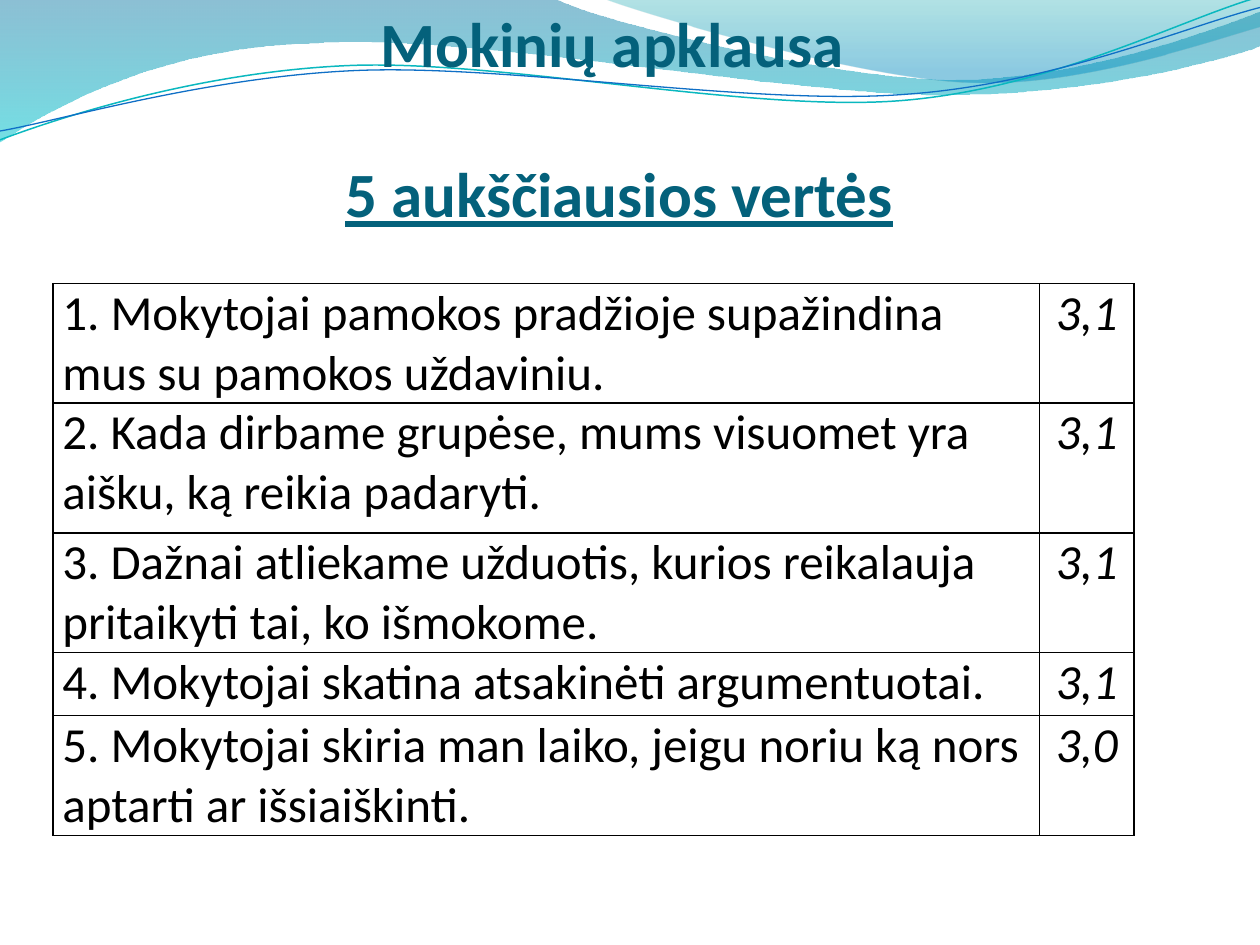
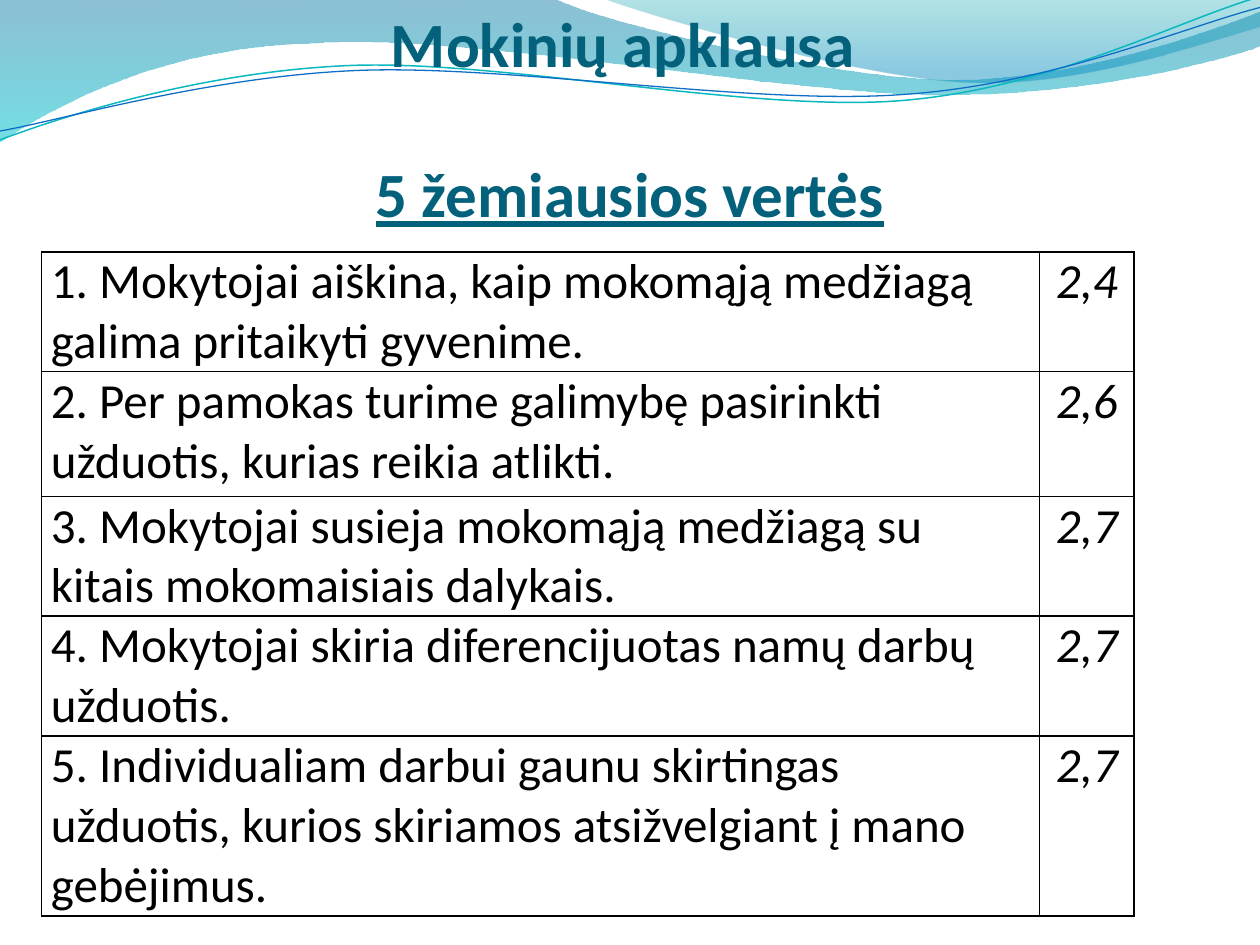
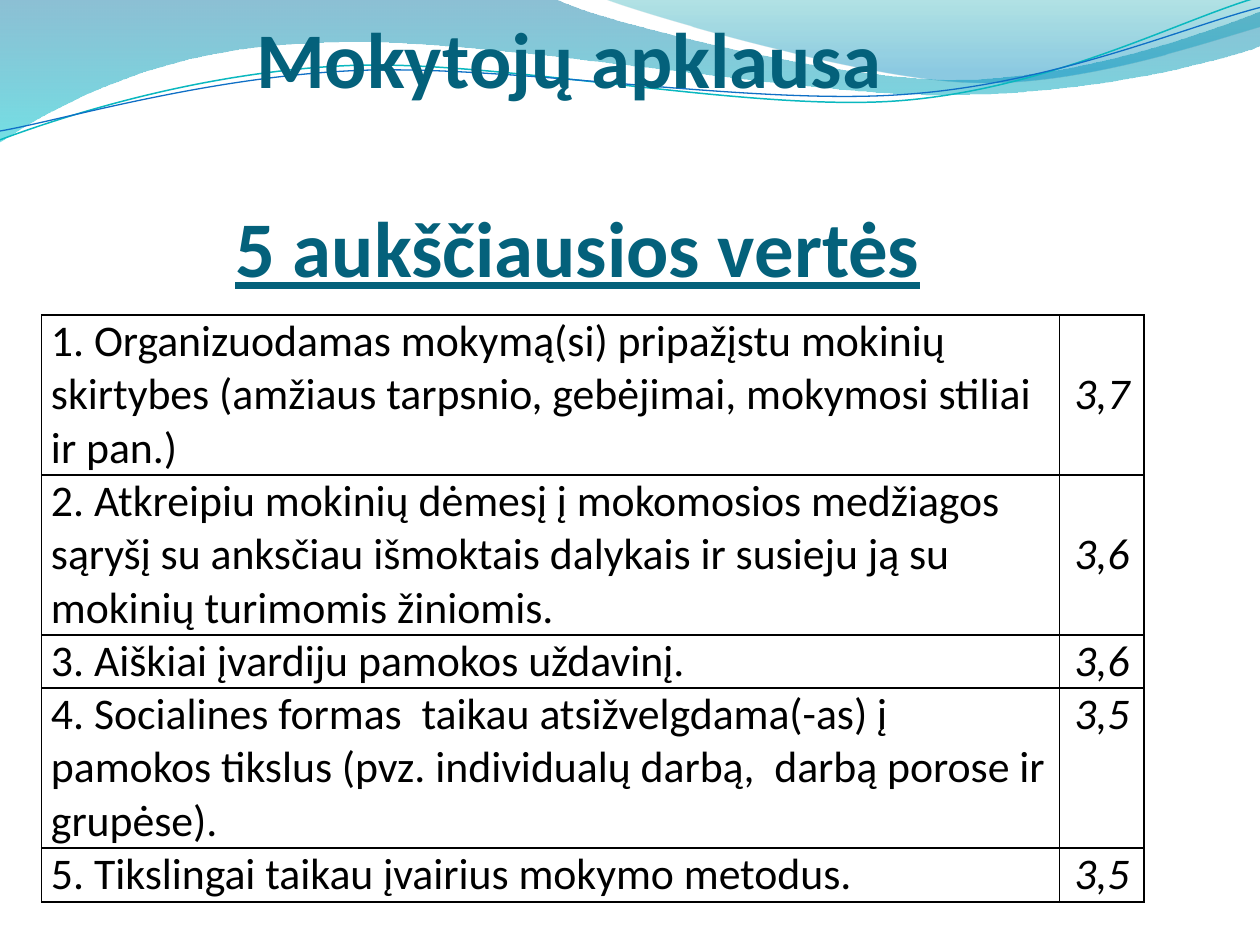
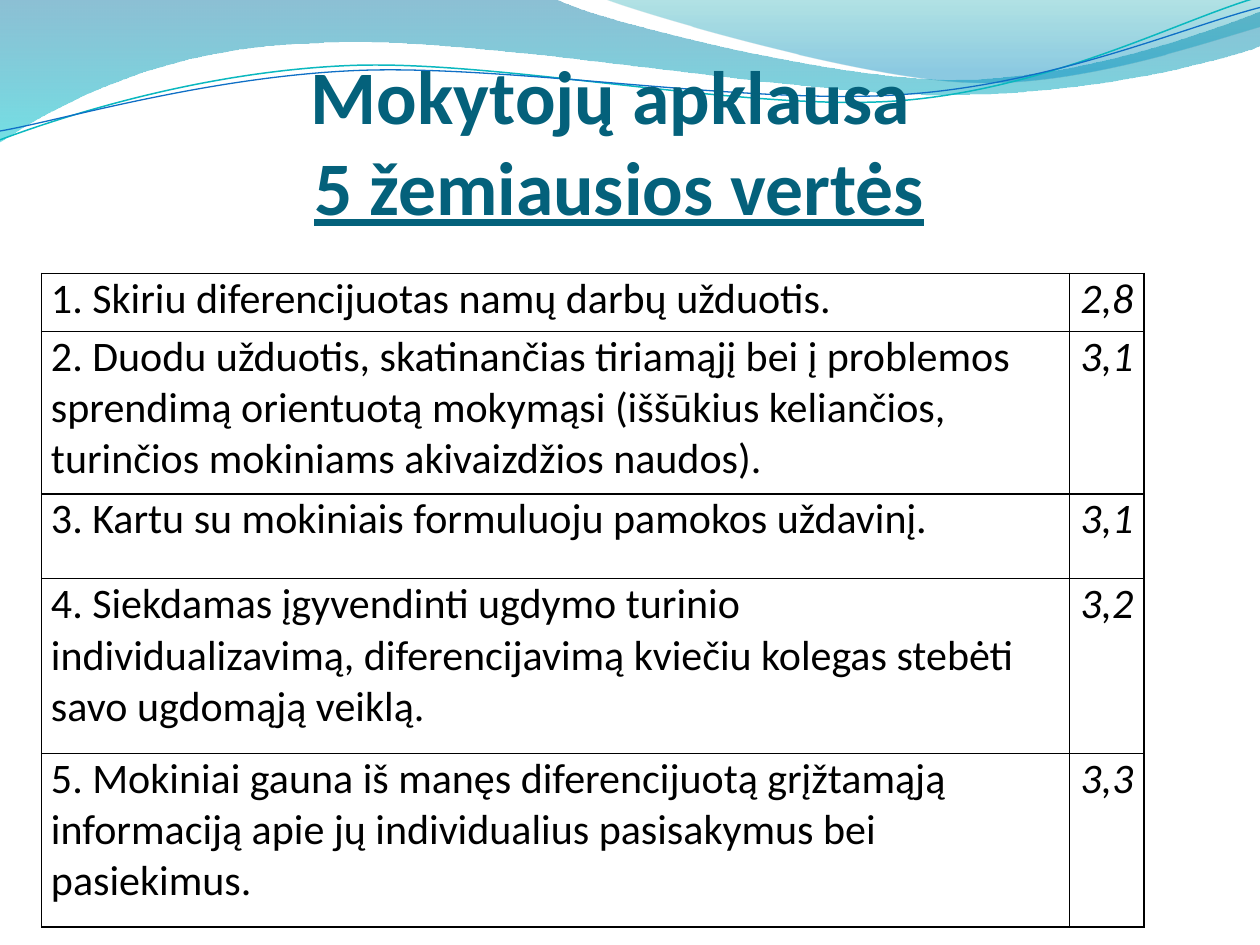
from math import cos, radians, sin
from lxml.etree import SubElement
from pptx import Presentation
from pptx.dml.color import RGBColor as RGB
from pptx.enum.text import MSO_ANCHOR as ANCHOR, PP_ALIGN as ALIGN
from pptx.oxml.ns import qn
from pptx.util import Inches, Pt

FONT = "Calibri"
COLORS = {
    "title": "04617B", "text": "000000", "teal": "0AB8BF", "blue": "0F6FC6",
    "deep": "0074A1", "aqua": "00C6CF", "sea": "00A1A9", "sky": "008BBF",
}
TILT = -2.7

# Outlines in inches: pairs are straight steps, sixes are Bezier curves.
BAND = [(0, 0), (4.4, -0.01), (4.76, 0.17, 6.64, 0.63, 7.58, 0.63),
        (8.53, 0.63, 9.58, 0.26, 10, 0.09), (10.01, 0.36),
        (9.83, 0.44, 8.7, 0.76, 7.46, 0.75), (6.22, 0.75, 3.82, 0.28, 2.57, 0.34),
        (1.29, 0.36, 0.46, 0.83, -0.01, 1.13), (0, 0)]
CREST = [(4.79, -0.01), (5.09, 0.11, 6.82, 0.62, 7.69, 0.65),
         (8.56, 0.69, 9.61, 0.32, 10, 0.21), (10, 0), (4.79, -0.01)]
TEAL_LINE = [(0, 1.11), (0.48, 0.93, 1.58, 0.57, 2.77, 0.52),
             (3.95, 0.47, 5.93, 0.89, 7.13, 0.8), (8.33, 0.71, 9.38, 0.15, 9.98, -0.02)]
BLUE_LINE = [(0, 1.04), (0.47, 0.96, 1.64, 0.61, 2.83, 0.56),
             (4.03, 0.51, 5.97, 0.84, 7.17, 0.75), (8.36, 0.67, 9.41, 0.21, 10, 0.06)]

PUPILS, STAFF = "Mokinių apklausa ", "Mokytojų apklausa "
HIGH, LOW = "5 aukščiausios vertės", "5 žemiausios vertės"

# Title: lines, size, box, gap in line heights. Rows: text, value, height.
SLIDES = [
    {"title": (PUPILS, HIGH, 36, (0.75, 0.58, 8.33, 1.25), 1),
     "at": (0.42, 2.25), "cols": (7.83, 0.75), "size": 28,
     "rows": [
         ("1. Mokytojai pamokos pradžioje supažindina mus su pamokos uždaviniu.", "3,1", 0.95),
         ("2. Kada dirbame grupėse, mums visuomet yra aišku, ką reikia padaryti.", "3,1", 1.03),
         ("3. Dažnai atliekame užduotis, kurios reikalauja pritaikyti tai, ko išmokome.",
          "3,1", 0.95),
         ("4. Mokytojai skatina atsakinėti argumentuotai.", "3,1", 0.5),
         ("5. Mokytojai skiria man laiko, jeigu noriu ką nors aptarti ar išsiaiškinti.",
          "3,0", 0.95)]},
    {"title": (PUPILS, LOW, 36, (0.5, 0.58, 9, 1.25), 1),
     "at": (0.33, 2), "cols": (7.92, 0.75), "size": 28,
     "rows": [
         ("1. Mokytojai aiškina, kaip mokomąją medžiagą galima pritaikyti gyvenime.",
          "2,4", 0.95),
         ("2. Per pamokas turime galimybę pasirinkti užduotis, kurias reikia atlikti.",
          "2,6", 0.99),
         ("3. Mokytojai susieja mokomąją medžiagą su kitais mokomaisiais dalykais.",
          "2,7", 0.95),
         ("4. Mokytojai skiria diferencijuotas namų darbų užduotis.", "2,7", 0.95),
         ("5. Individualiam darbui gaunu skirtingas užduotis, kurios skiriamos "
          "atsižvelgiant į mano gebėjimus.", "2,7", 1.43)]},
    {"title": (STAFF, HIGH, 45, (0.42, 1.08, 8.33, 1.25), 1),
     "at": (0.33, 2.5), "cols": (8.08, 0.67), "size": 25, "middle": (0, 1),
     "rows": [
         ("1. Organizuodamas mokymą(si) pripažįstu mokinių skirtybes (amžiaus tarpsnio, "
          "gebėjimai, mokymosi stiliai ir pan.)", "3,7", 1.27),
         ("2. Atkreipiu mokinių dėmesį į mokomosios medžiagos sąryšį su anksčiau "
          "išmoktais dalykais ir susieju ją su mokinių turimomis žiniomis.", "3,6", 1.27),
         ("3. Aiškiai įvardiju pamokos uždavinį.", "3,6", 0.42),
         ("4. Socialines formas  taikau atsižvelgdama(-as) į pamokos tikslus (pvz. "
          "individualų darbą,  darbą porose ir grupėse).", "3,5", 1.27),
         ("5. Tikslingai taikau įvairius mokymo metodus.", "3,5", 0.43)]},
    {"title": (STAFF, LOW, 43.2, (0.75, 0.58, 8.33, 1.25), 0),
     "at": (0.33, 2.17), "cols": (8.16, 0.59), "size": 24,
     "rows": [
         ("1. Skiriu diferencijuotas namų darbų užduotis.", "2,8", 0.46),
         ("2. Duodu užduotis, skatinančias tiriamąjį bei į problemos sprendimą "
          "orientuotą mokymąsi (iššūkius keliančios, turinčios mokiniams akivaizdžios "
          "naudos).", "3,1", 1.29),
         ("3. Kartu su mokiniais formuluoju pamokos uždavinį.", "3,1", 0.67),
         ("4. Siekdamas įgyvendinti ugdymo turinio\nindividualizavimą, diferencijavimą "
          "kviečiu kolegas stebėti savo ugdomąją veiklą.", "3,2", 1.39),
         ("5. Mokiniai gauna iš manęs diferencijuotą grįžtamąją informaciją apie jų "
          "individualius pasisakymus bei pasiekimus.", "3,3", 1.38)]},
]


def color(name):
    """Return a named colour."""
    return RGB.from_string(COLORS[name])


def pairs(step):
    """Split a step into its points."""
    return list(zip(step[::2], step[1::2]))


def turn(steps, center, angle):
    """Rotate all points about a center."""
    (mid_x, mid_y), rad = center, radians(angle)
    return [tuple(value for x, y in pairs(step) for value in (
        mid_x + (x - mid_x) * cos(rad) - (y - mid_y) * sin(rad),
        mid_y + (x - mid_x) * sin(rad) + (y - mid_y) * cos(rad))) for step in steps]


def add_path(slide, steps, close):
    """Draw an outline of lines and Bezier curves, without shadow."""
    first, *rest = [(Inches(x), Inches(y)) for step in steps for x, y in pairs(step)]
    pen = slide.shapes.build_freeform(*first)
    pen.add_line_segments(rest, close=close)
    shape = pen.convert_to_shape()
    shape.shadow.inherit = False
    lines = iter(list(shape._element.iter(qn("a:lnTo"))))
    for step in steps[1:]:
        line = next(lines)
        if len(step) == 6:
            curve = line.makeelement(qn("a:cubicBezTo"), {})
            line.addprevious(curve)
            for part in (line, next(lines), next(lines)):
                curve.append(part[0])
                part.getparent().remove(part)
    return shape


def add_wave(slide, steps, stops):
    """Draw a filled wave; stops hold position, colour and opacity in percent."""
    shape = add_path(slide, steps, True)
    shape.line.fill.background()
    shape.fill.gradient()
    shape.fill.gradient_angle = 270
    for stop, (place, name, _) in zip(shape.fill.gradient_stops, stops):
        stop.position = place / 100
        stop.color.rgb = color(name)
    tints = list(shape._element.spPr.iter(qn("a:srgbClr")))
    for tint, (_, _, alpha) in zip(tints, stops):
        SubElement(tint, qn("a:alpha"), val=str(alpha * 1000))


def add_curve(slide, steps, center, name, width):
    """Draw an open curved line in a tilted frame."""
    shape = add_path(slide, turn(steps, center, -TILT), False)
    shape.rotation = TILT
    shape.fill.background()
    shape.line.color.rgb = color(name)
    shape.line.width = Pt(width)


def add_waves(slide, layout):
    """Draw the waves once and move them to the layout all slides share."""
    for holder in list(layout.placeholders):
        holder._element.getparent().remove(holder._element)
    add_wave(slide, BAND, [(0, "deep", 45), (100, "aqua", 55)])
    add_wave(slide, CREST, [(0, "sea", 30), (80, "sky", 45)])
    add_curve(slide, TEAL_LINE, (4.99, 0.58), "teal", 0.85)
    add_curve(slide, BLUE_LINE, (5, 0.59), "blue", 0.75)
    for shape in list(slide.shapes):
        layout.shapes._spTree.append(shape._element)


def set_font(para, size, name):
    """Set the font of a whole paragraph."""
    para.font.name, para.font.size = FONT, Pt(size)
    para.font.color.rgb = color(name)


def add_title(slide, top, bottom, size, box, gap):
    """Add the survey name and the underlined heading below it."""
    frame = slide.shapes.add_textbox(*map(Inches, box)).text_frame
    frame.word_wrap = True
    frame.vertical_anchor = ANCHOR.BOTTOM
    frame.margin_left = frame.margin_right = frame.margin_bottom = 0
    frame.text = f"{top}\n{bottom}"
    for para in frame.paragraphs:
        para.alignment = ALIGN.CENTER
        para.font.bold = True
        set_font(para, size, "title")
    para.font.underline = True
    para.space_before = Pt(round(gap * 1.2 * size))


def add_border(cell):
    """Give a cell thin black edges."""
    props = cell._tc.get_or_add_tcPr()
    for i, side in enumerate(("lnL", "lnR", "lnT", "lnB")):
        edge = props.makeelement(qn(f"a:{side}"), {"w": str(Pt(1))})
        fill = SubElement(edge, qn("a:solidFill"))
        SubElement(fill, qn("a:srgbClr"), val=COLORS["text"])
        props.insert(i, edge)


def fill_cell(cell, text, size, value, middle):
    """Write a statement or its value into a cell."""
    cell.fill.background()
    add_border(cell)
    cell.margin_left = cell.margin_right = Pt(5.4)
    cell.margin_top = cell.margin_bottom = 0
    cell.vertical_anchor = ANCHOR.MIDDLE if middle else ANCHOR.TOP
    cell.text = text
    for para in cell.text_frame.paragraphs:
        set_font(para, size, "text")
        para.space_before, para.space_after = Pt(0.5), Pt(0.1)
        para.font.italic = value
        para.alignment = ALIGN.CENTER if value else ALIGN.LEFT


def add_scores(slide, at, cols, size, rows, middle=()):
    """Add the table of statements and values."""
    extent = (sum(cols), sum(row[2] for row in rows))
    table = slide.shapes.add_table(len(rows), 2, *map(Inches, at + extent)).table
    table.first_row = table.horz_banding = False
    for col, width in zip(table.columns, cols):
        col.width = Inches(width)
    for i, (text, score, height) in enumerate(rows):
        table.rows[i].height = Inches(height)
        fill_cell(table.cell(i, 0), text, size, False, False)
        fill_cell(table.cell(i, 1), score, size, True, i in middle)


def main():
    """Build the survey slides."""
    deck = Presentation()
    deck.slide_width, deck.slide_height = Inches(10), Inches(7.5)
    blank = deck.slide_layouts[6]
    for i, data in enumerate(SLIDES):
        slide = deck.slides.add_slide(blank)
        if i == 0:
            add_waves(slide, blank)
        add_title(slide, *data["title"])
        add_scores(slide, data["at"], data["cols"], data["size"], data["rows"],
                   data.get("middle", ()))
    deck.save("out.pptx")


main()
